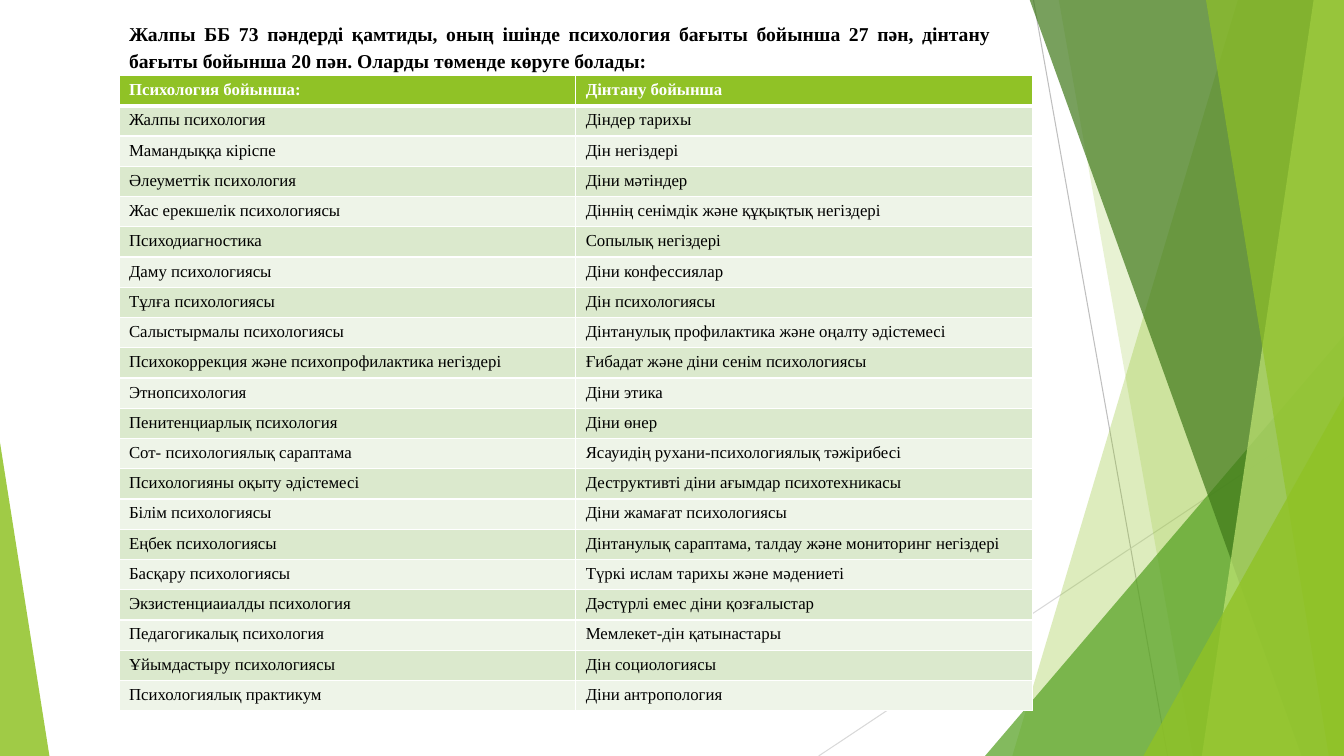
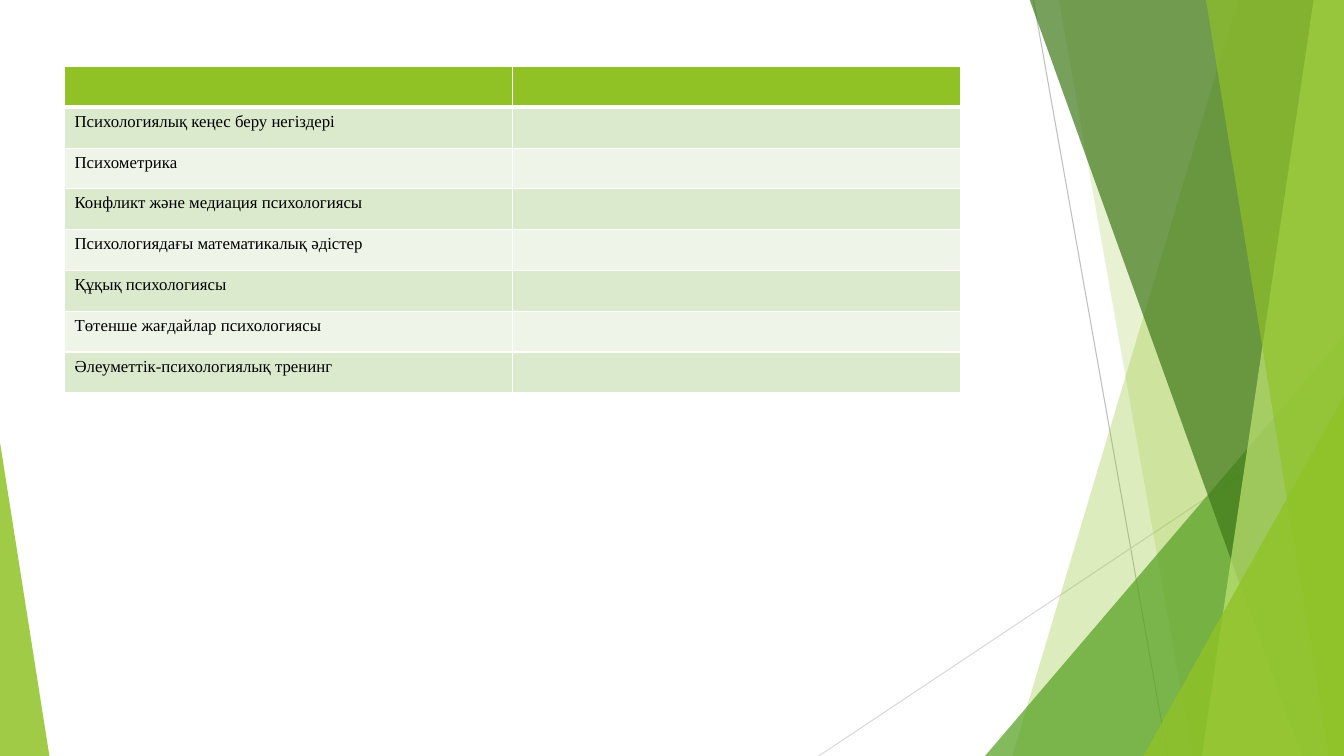
from dataclasses import dataclass

from lxml import etree
from pptx import Presentation
from pptx.dml.color import RGBColor
from pptx.enum.shapes import MSO_CONNECTOR, MSO_SHAPE
from pptx.enum.text import MSO_ANCHOR, MSO_AUTO_SIZE, PP_ALIGN
from pptx.oxml.ns import qn
from pptx.util import Inches, Pt

STRAIGHT = MSO_CONNECTOR.STRAIGHT
TRIANGLE = MSO_SHAPE.ISOSCELES_TRIANGLE
TOP = MSO_ANCHOR.TOP
NO_AUTOFIT = MSO_AUTO_SIZE.NONE
LEFT, JUSTIFY = PP_ALIGN.LEFT, PP_ALIGN.JUSTIFY
TITLE_ONLY, BLANK = 5, 6
WIDTH, HEIGHT = 13.33, 7.5
BLEED_TOP = -0.01
MASTER_ID_START = 100


@dataclass(frozen=True)
class Theme:
    font: str = "Times New Roman"
    title_size: int = 14
    cell_size: int = 12
    text: str = "000000"
    white: str = "FFFFFF"
    lime: str = "90C226"
    pale_lime: str = "C0E474"
    green: str = "54A021"
    dark_green: str = "3F7819"
    steep_line: str = "BFBFBF"
    shallow_line: str = "D9D9D9"
    bands: tuple = ("DBE9CD", "EEF4E8")
    thin_border: int = 1
    header_border: int = 3


THEME = Theme()

TITLE = ("Жалпы ББ 73 пәндерді қамтиды, оның ішінде психология бағыты бойынша 27 пән, "
         "дінтану бағыты бойынша 20 пән. Оларды төменде көруге болады:")

SUBJECTS = [
    ("Психология бойынша:", "Дінтану бойынша"),
    ("Жалпы психология", "Діндер тарихы"),
    ("Мамандыққа кіріспе", "Дін негіздері"),
    ("Әлеуметтік психология", "Діни мәтіндер"),
    ("Жас ерекшелік психологиясы", "Діннің сенімдік және құқықтық негіздері"),
    ("Психодиагностика", "Сопылық негіздері"),
    ("Даму психологиясы", "Діни конфессиялар"),
    ("Тұлға психологиясы", "Дін психологиясы"),
    ("Салыстырмалы психологиясы", "Дінтанулық профилактика және оңалту әдістемесі"),
    ("Психокоррекция және психопрофилактика негіздері",
     "Ғибадат және діни сенім психологиясы"),
    ("Этнопсихология", "Діни этика"),
    ("Пенитенциарлық психология", "Діни өнер"),
    ("Сот- психологиялық сараптама", "Ясауидің рухани-психологиялық тәжірибесі"),
    ("Психологияны оқыту әдістемесі", "Деструктивті діни ағымдар психотехникасы"),
    ("Білім психологиясы", "Діни жамағат психологиясы"),
    ("Еңбек психологиясы", "Дінтанулық сараптама, талдау және мониторинг негіздері"),
    ("Басқару психологиясы", "Түркі ислам тарихы және мәдениеті"),
    ("Экзистенциаиалды психология", "Дәстүрлі емес діни қозғалыстар"),
    ("Педагогикалық психология", "Мемлекет-дін қатынастары"),
    ("Ұйымдастыру психологиясы", "Дін социологиясы"),
    ("Психологиялық практикум", "Діни антропология"),
]

MORE_SUBJECTS = [
    ("", ""),
    ("Психологиялық кеңес беру негіздері", ""),
    ("Психометрика", ""),
    ("Конфликт және медиация психологиясы", ""),
    ("Психологиядағы математикалық әдістер", ""),
    ("Құқық психологиясы", ""),
    ("Төтенше жағдайлар психологиясы", ""),
    ("Әлеуметтік-психологиялық тренинг", ""),
]


def write(frame, content, *, size, color=THEME.text, bold=False, align=LEFT, spacing=None):
    frame.word_wrap = True
    paragraph = frame.paragraphs[0]
    paragraph.alignment = align
    paragraph.line_spacing = spacing
    run = paragraph.add_run()
    run.text = content
    run.font.name = THEME.font
    run.font.size = Pt(size)
    run.font.bold = bold
    run.font.color.rgb = RGBColor.from_string(color)


def tint(shape, color, opacity):
    """Give a shape a see-through fill with no outline or shadow."""
    shape.shadow.inherit = False
    shape.line.fill.background()
    shape.fill.solid()
    shape.fill.fore_color.rgb = RGBColor.from_string(color)
    fill_color = shape.element.xpath("p:spPr/a:solidFill/a:srgbClr")[0]
    etree.SubElement(fill_color, qn("a:alpha")).set("val", str(opacity * 1000))


def add_hairline(shapes, start, end, color):
    hairline = shapes.add_connector(STRAIGHT, *map(Inches, start + end))
    hairline.line.color.rgb = RGBColor.from_string(color)
    hairline.line.width = Pt(0.75)
    etree.SubElement(hairline.element.xpath("p:spPr")[0], qn("a:effectLst"))


def add_ribbon(shapes, top_x, bottom_x, color, opacity):
    """Fill the area from a slanted left edge to the right side of the slide."""
    corners = [(WIDTH, BLEED_TOP), (WIDTH, HEIGHT), (bottom_x, HEIGHT)]
    outline = shapes.build_freeform(Inches(top_x), Inches(BLEED_TOP))
    outline.add_line_segments([(Inches(x), Inches(y)) for x, y in corners], close=True)
    tint(outline.convert_to_shape(), color, opacity)


def add_wedge(shapes, left, top, right, apex, color, opacity):
    """Stand a right-angled triangle on the bottom edge; apex 0 is left, 1 is right."""
    box = (left, top, right - left, HEIGHT - top)
    wedge = shapes.add_shape(TRIANGLE, *map(Inches, box))
    wedge.adjustments[0] = apex
    tint(wedge, color, opacity)


def add_facets(master, slide):
    """Draw the faceted backdrop as a group and move it to the master."""
    facets = slide.shapes.add_group_shape()
    shapes = facets.shapes
    add_hairline(shapes, (10.25, 0), (11.58, HEIGHT), THEME.steep_line)
    add_hairline(shapes, (WIDTH, 4.03), (8.12, HEIGHT), THEME.shallow_line)
    add_ribbon(shapes, 12.28, 10.04, THEME.lime, 30)
    add_ribbon(shapes, 10.5, 11.83, THEME.lime, 20)
    add_wedge(shapes, 9.77, 3.33, WIDTH, 1, THEME.green, 72)
    add_ribbon(shapes, 10.21, 12.91, THEME.dark_green, 70)
    add_ribbon(shapes, 13.03, 11.92, THEME.pale_lime, 70)
    add_ribbon(shapes, 11.96, 13.18, THEME.lime, 65)
    add_wedge(shapes, 11.34, 3.93, WIDTH, 1, THEME.lime, 80)
    add_wedge(shapes, 0, 4.39, 0.49, 0, THEME.lime, 85)
    for number, properties in enumerate(facets.element.xpath(".//p:cNvPr"), MASTER_ID_START):
        properties.set("id", str(number))
    master.shapes.element.append(facets.element)


def set_title(slide, content):
    title = slide.shapes.title
    title.left, title.top, title.width, title.height = map(Inches, (1.18, 0.13, 8.75, 0.64))
    frame = title.text_frame
    frame.auto_size = NO_AUTOFIT
    frame.vertical_anchor = TOP
    write(frame, content, size=THEME.title_size, bold=True, align=JUSTIFY, spacing=1.15)


def set_borders(cell, **widths):
    """Draw white cell edges; the keywords L, R, T and B are widths in points."""
    properties = cell._tc.get_or_add_tcPr()
    for side in "LRTB":
        width = widths.get(side, THEME.thin_border)
        edge = etree.SubElement(properties, qn(f"a:ln{side}"), w=str(Pt(width)))
        fill = etree.SubElement(edge, qn("a:solidFill"))
        etree.SubElement(fill, qn("a:srgbClr"), val=THEME.white)


def style_cell(cell, row_index):
    if row_index == 0:
        set_borders(cell, B=THEME.header_border)
        color = THEME.lime
    else:
        top = THEME.header_border if row_index == 1 else THEME.thin_border
        set_borders(cell, T=top)
        color = THEME.bands[(row_index - 1) % 2]
    cell.fill.solid()
    cell.fill.fore_color.rgb = RGBColor.from_string(color)


def add_subject_table(slide, rows, left, top, width, height):
    columns = len(rows[0])
    table = slide.shapes.add_table(len(rows), columns,
                                   *map(Inches, (left, top, width, height))).table
    for column in table.columns:
        column.width = Inches(width / columns)
    for row_index, subjects in enumerate(rows):
        table.rows[row_index].height = Inches(height / len(rows))
        is_header = row_index == 0
        for column_index, subject in enumerate(subjects):
            cell = table.cell(row_index, column_index)
            style_cell(cell, row_index)
            write(cell.text_frame, subject, size=THEME.cell_size, bold=is_header,
                  color=THEME.white if is_header else THEME.text)


def main():
    deck = Presentation()
    deck.slide_width, deck.slide_height = Inches(WIDTH), Inches(HEIGHT)

    overview = deck.slides.add_slide(deck.slide_layouts[TITLE_ONLY])
    add_facets(deck.slide_master, overview)
    set_title(overview, TITLE)
    add_subject_table(overview, SUBJECTS, 1.18, 0.75, 9.06, 6.3)

    continuation = deck.slides.add_slide(deck.slide_layouts[BLANK])
    add_subject_table(continuation, MORE_SUBJECTS, 0.64, 0.66, 8.89, 3.24)

    deck.save("out.pptx")


if __name__ == "__main__":
    main()
